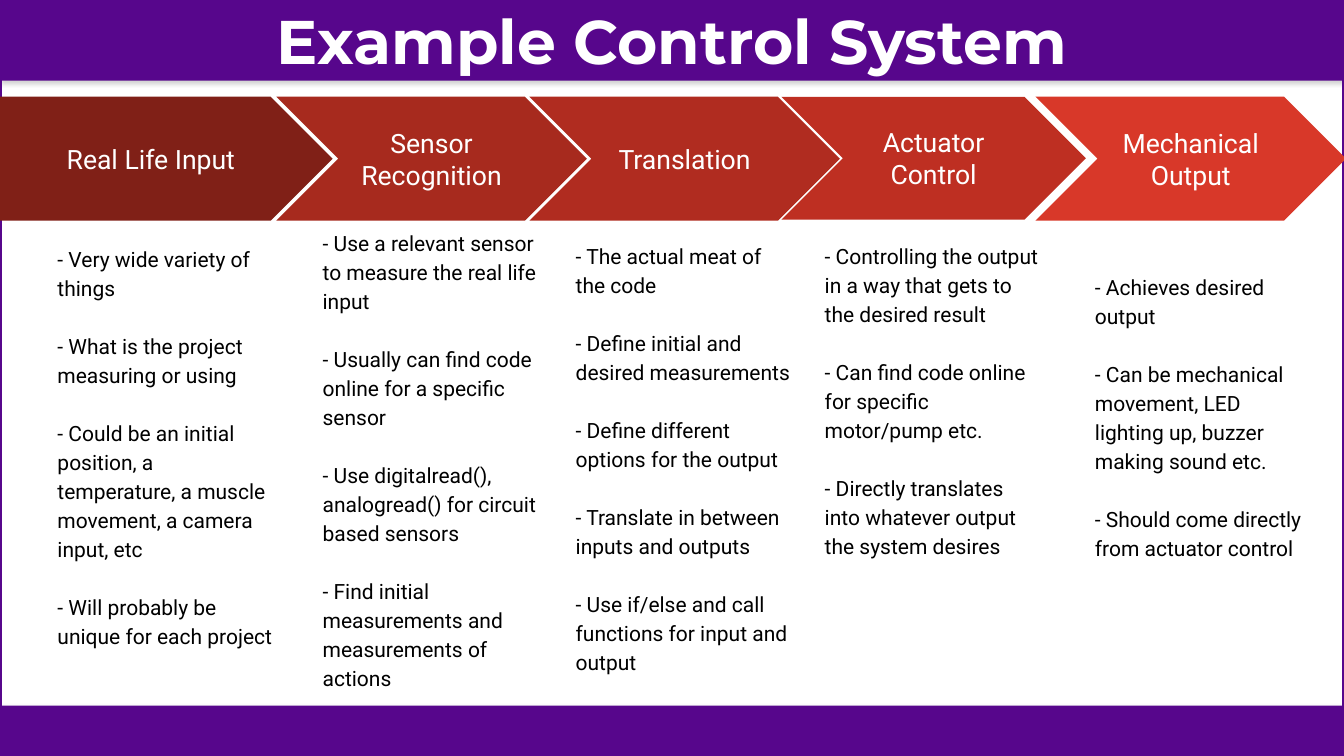
from lxml import etree
from pptx import Presentation
from pptx.dml.color import RGBColor
from pptx.enum import shapes, text
from pptx.oxml import ns
from pptx.util import Inches, Pt

WIDTH, HEIGHT = 13.33, 7.5
COLORS = {"purple": "57068C", "white": "FFFFFF", "black": "000000", "shadow": "808080"}
SHAPE = shapes.MSO_SHAPE
STAGE_TOP, INSET = 0.96, 0.13
NOTES_WIDTH = 2.42

# Each stage: title, preset, colour, arrow (left, width, height),
# notes (left, top, height), notes
STAGES = [
    ("Real Life Input", SHAPE.PENTAGON, "802017", (0, 3.3, 1.23), (0.44, 2.28, 4.34), [
        "- Very wide variety of things",
        "- What is the project measuring or using",
        "- Could be an initial position, a temperature, a muscle movement, a camera input, etc",
        "- Will probably be unique for each project"]),
    ("Sensor Recognition", SHAPE.CHEVRON, "A72A1E", (2.74, 3.08, 1.23), (3.07, 2.12, 4.34), [
        "- Use a relevant sensor to measure the real life input",
        "- Usually can find code online for a specific sensor",
        "- Use digitalread(), analogread() for circuit based sensors",
        "- Find initial measurements and measurements of actions"]),
    ("Translation", SHAPE.CHEVRON, "B02C20", (5.25, 3.08, 1.23), (5.58, 2.25, 4.64), [
        "- The actual meat of the code",
        "- Define initial and desired measurements",
        "- Define different options for the output",
        "- Translate in between inputs and outputs",
        "- Use if/else and call functions for input and output"]),
    ("Actuator Control", SHAPE.CHEVRON, "BE2F22", (7.75, 3.02, 1.22), (8.05, 2.25, 4.64), [
        "- Controlling the output in a way that gets to the desired result",
        "- Can find code online for specific motor/pump etc.",
        "- Directly translates into whatever output the system desires"]),
    ("Mechanical Output", SHAPE.CHEVRON, "D83829", (10.27, 3.08, 1.23), (10.73, 2.56, 4.34), [
        "- Achieves desired output",
        "- Can be mechanical movement, LED lighting up, buzzer making sound etc.",
        "- Should come directly from actuator control"]),
]


def inches(box):
    return [Inches(length) for length in box]


def add_block(page, preset, box, fill=None):
    block = page.shapes.add_shape(preset, *inches(box))
    block.shadow.inherit = False
    block.line.fill.background()
    if fill:
        block.fill.solid()
        block.fill.fore_color.rgb = RGBColor.from_string(fill)
    else:
        block.fill.background()
    return block


def write(shape, lines, size, font, color, inset, align, anchor, bold=False):
    frame = shape.text_frame
    frame.text = "\n".join(lines)
    frame.word_wrap = True
    frame.vertical_anchor = anchor
    frame.margin_left = frame.margin_right = Inches(inset)
    frame.margin_top = frame.margin_bottom = Inches(inset)
    for para in frame.paragraphs:
        para.alignment = align
        for span in para.runs:
            span.font.size = Pt(size)
            span.font.name = font
            span.font.bold = bold
            span.font.color.rgb = RGBColor.from_string(color)
    return frame


def add_bar(page, box):
    """Purple band with a soft shadow below it."""
    bar = add_block(page, SHAPE.RECTANGLE, box, COLORS["purple"])
    effects = bar.element.spPr.find(ns.qn("a:effectLst"))
    shadow = etree.SubElement(effects, ns.qn("a:outerShdw"), blurRad=str(Pt(3.1)),
                              dist=str(Pt(1.8)), dir="5400000", rotWithShape="0")
    tint = etree.SubElement(shadow, ns.qn("a:srgbClr"), val=COLORS["shadow"])
    etree.SubElement(tint, ns.qn("a:alpha"), val="35000")


def add_frame(page, box):
    border = add_block(page, SHAPE.RECTANGLE, box)
    border.line.color.rgb = RGBColor.from_string(COLORS["purple"])
    border.line.width = Pt(2.25)


def add_title(page, box, title):
    heading = page.shapes.add_textbox(*inches(box))
    write(heading, [title], 44, "Montserrat", COLORS["white"], 0.1,
          text.PP_ALIGN.CENTER, text.MSO_ANCHOR.MIDDLE, bold=True)


def add_arrow(page, box, preset, fill, title):
    arrow = add_block(page, preset, box, fill)
    arrow.adjustments[0] = 0.5
    write(arrow, [title], 19, "Roboto", COLORS["white"], INSET,
          text.PP_ALIGN.CENTER, text.MSO_ANCHOR.MIDDLE)


def add_notes(page, box, notes):
    column = page.shapes.add_textbox(*inches(box))
    frame = write(column, notes, 15, "Roboto", COLORS["black"], INSET,
                  text.PP_ALIGN.LEFT, text.MSO_ANCHOR.TOP)
    for index, para in enumerate(frame.paragraphs):
        para.line_spacing = 1.15
        if index:
            para.space_before = Pt(20.7)


def main():
    deck = Presentation()
    deck.slide_width, deck.slide_height = Inches(WIDTH), Inches(HEIGHT)
    page = deck.slides.add_slide(deck.slide_layouts[6])

    # Bands, border and title
    header = (0, 0, WIDTH, 0.8)
    add_bar(page, header)
    add_frame(page, (0, 0, WIDTH, HEIGHT))
    add_bar(page, (0, 7, WIDTH, 0.5))
    add_title(page, header, "Example Control System")

    # Process stages with their notes
    for title, preset, fill, arrow, column, notes in STAGES:
        left, width, height = arrow
        add_arrow(page, (left, STAGE_TOP, width, height), preset, fill, title)
        left, top, height = column
        add_notes(page, (left, top, NOTES_WIDTH, height), notes)

    deck.save("out.pptx")


if __name__ == "__main__":
    main()
